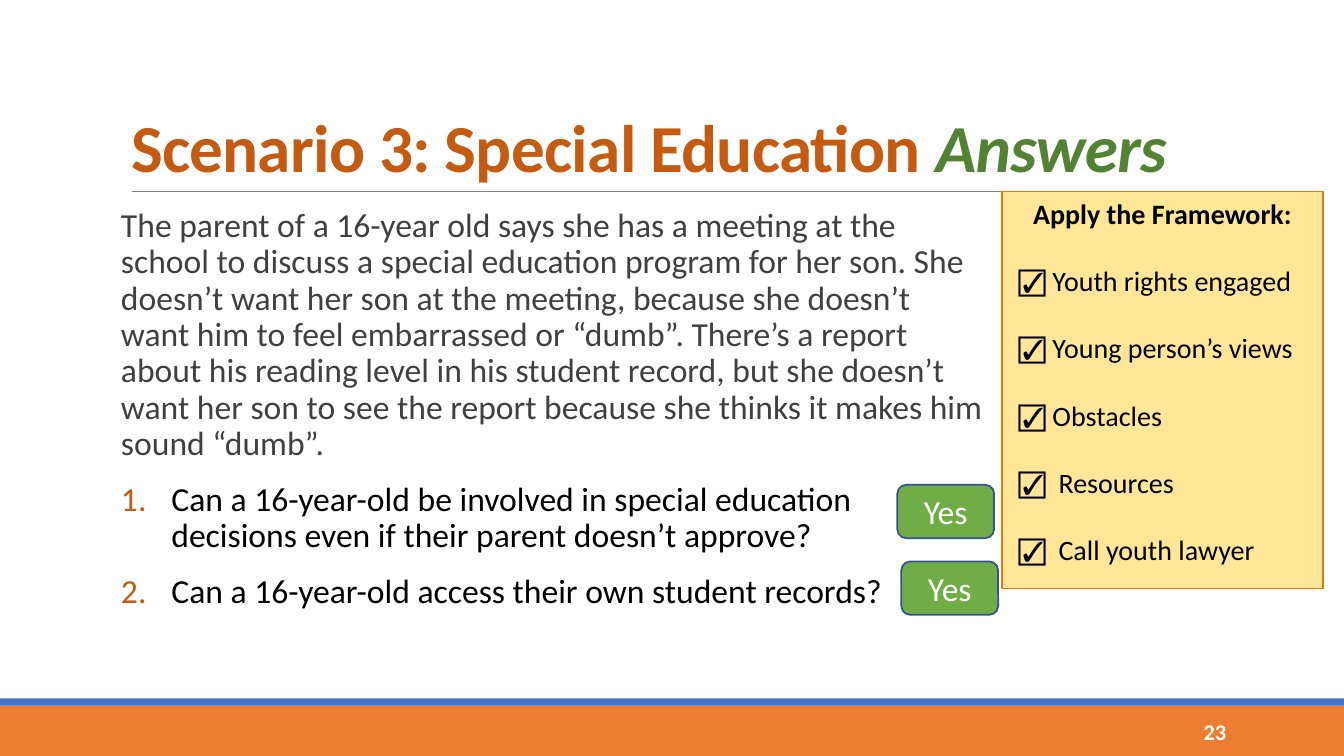
from lxml import etree
from pptx import Presentation
from pptx import util as u
from pptx.enum import shapes, text
from pptx.dml.color import RGBColor
from pptx.oxml.ns import qn

W, H = 13.33, 7.5
COLORS = {
    "orange": "ED7D31", "blue": "4472C4", "rule": "808080", "rust": "C55A11",
    "dark_green": "548235", "gray": "404040", "black": "000000", "white": "FFFFFF",
    "cream": "FFE699", "gold": "DB7E06", "green": "70AD47", "navy": "325491",
}
SCENARIO = (
    "The parent of a 16-year old says she has a meeting at the school to discuss a "
    "special education program for her son. She doesn’t want her son at the meeting, "
    "because she doesn’t want him to feel embarrassed or “dumb”. There’s a report about "
    "his reading level in his student record, but she doesn’t want her son to see the "
    "report because she thinks it makes him sound “dumb”."
)
QUESTIONS = [
    "Can a 16-year-old be involved in special education decisions even if their parent "
    "doesn’t approve?",
    "Can a 16-year-old access their own student records?",
]
# Each step with the left edge of its wording
STEPS = [("Youth rights engaged", 0.4), ("Young person’s views", 0.4),
         ("Obstacles", 0.4), ("Resources", 0.46), ("Call youth lawyer", 0.46)]


def write(p, words, size, color, bold=False, italic=False, align="LEFT",
          line=1.0, before=0, after=0, margin=0, indent=0, spacing=0):
    """Add a formatted run to paragraph p and set the paragraph's layout."""
    p.alignment = getattr(text.PP_ALIGN, align)
    p.line_spacing = line
    p.space_before, p.space_after = u.Pt(before), u.Pt(after)
    pPr = p._p.get_or_add_pPr()
    pPr.set("marL", str(u.Inches(margin)))
    pPr.set("indent", str(u.Inches(indent)))
    r = p.add_run()
    r.text = words
    f = r.font
    f.name, f.size, f.bold, f.italic = "Calibri", u.Pt(size), bold, italic
    f.color.rgb = RGBColor.from_string(COLORS[color])
    if spacing:
        r._r.get_or_add_rPr().set("spc", str(int(spacing * 100)))
    return pPr


def add_box(kind, left, top, width, height, fill, line=None):
    sp = s.shapes.add_shape(kind, *map(u.Inches, (left, top, width, height)))
    sp.shadow.inherit = False
    sp.fill.solid()
    sp.fill.fore_color.rgb = RGBColor.from_string(COLORS[fill])
    if line:
        sp.line.color.rgb = RGBColor.from_string(COLORS[line])
        sp.line.width = u.Pt(1.25)
    else:
        sp.line.fill.background()
    sp.text_frame.word_wrap = True
    return sp


prs = Presentation()
prs.slide_width, prs.slide_height = u.Inches(W), u.Inches(H)
s = prs.slides.add_slide(prs.slide_layouts[1])
title, body = s.placeholders
RECT = shapes.MSO_SHAPE.RECTANGLE

# Footer bands and title rule
add_box(RECT, 0, 7, W, 0.5, "orange")
add_box(RECT, 0, 6.93, W, 0.07, "blue")
rule = s.shapes.add_connector(shapes.MSO_CONNECTOR.STRAIGHT,
                              *map(u.Inches, (1.31, 1.9, 12.21, 1.9)))
rule.line.color.rgb = RGBColor.from_string(COLORS["rule"])
rule.line.width = u.Pt(0.5)
etree.SubElement(rule._element.spPr, qn("a:effectLst"))

# Title
title.left, title.top, title.width, title.height = map(u.Inches, (1.2, 0.31, 11, 1.59))
tf = title.text_frame
tf.auto_size = text.MSO_AUTO_SIZE.NONE
tf.vertical_anchor = text.MSO_ANCHOR.BOTTOM
p = tf.paragraphs[0]
write(p, "Scenario 3: Special Education ", 48, "rust", bold=True, line=0.85, spacing=-0.5)
write(p, "Answers", 48, "dark_green", bold=True, italic=True, line=0.85, spacing=-0.5)

# Scenario and numbered questions
body.left, body.top, body.width, body.height = map(u.Inches, (1.2, 2.02, 8.56, 4.4))
tf = body.text_frame
tf.auto_size = text.MSO_AUTO_SIZE.NONE
tf.margin_left = tf.margin_right = 0
layout = dict(line=0.9, before=12, after=2)
pPr = write(tf.paragraphs[0], SCENARIO, 24, "gray", **layout)
etree.SubElement(pPr, qn("a:buNone"))
for question in QUESTIONS:
    pPr = write(tf.add_paragraph(), question, 24, "black", margin=0.5, indent=-0.5, **layout)
    clr = etree.SubElement(pPr, qn("a:buClr"))
    etree.SubElement(clr, qn("a:srgbClr"), val=COLORS["rust"])
    etree.SubElement(pPr, qn("a:buFont"), typeface="Calibri")
    etree.SubElement(pPr, qn("a:buAutoNum"), type="arabicPeriod")

# Framework checklist
tf = add_box(RECT, 9.94, 1.9, 3.18, 3.94, "cream", "gold").text_frame
tf.vertical_anchor = text.MSO_ANCHOR.TOP
write(tf.paragraphs[0], "Apply the Framework:", 20, "black", bold=True, align="CENTER")
for step, edge in STEPS:
    write(tf.add_paragraph(), f"☑\t{step}", 20, "black", before=24,
          margin=edge, indent=0.06 - edge)

# Answers
for left, top in [(8.9, 4.81), (8.94, 5.57)]:
    sp = add_box(shapes.MSO_SHAPE.ROUNDED_RECTANGLE, left, top, 0.96, 0.53, "green", "navy")
    sp.text_frame.vertical_anchor = text.MSO_ANCHOR.MIDDLE
    write(sp.text_frame.paragraphs[0], "Yes", 24, "white", align="CENTER")

# Slide number
tf = s.shapes.add_textbox(*map(u.Inches, (10.83, 7.06, 1.43, 0.4))).text_frame
tf.word_wrap = True
tf.vertical_anchor = text.MSO_ANCHOR.MIDDLE
write(tf.paragraphs[0], "23", 16, "white", bold=True, align="RIGHT")

prs.save("out.pptx")
